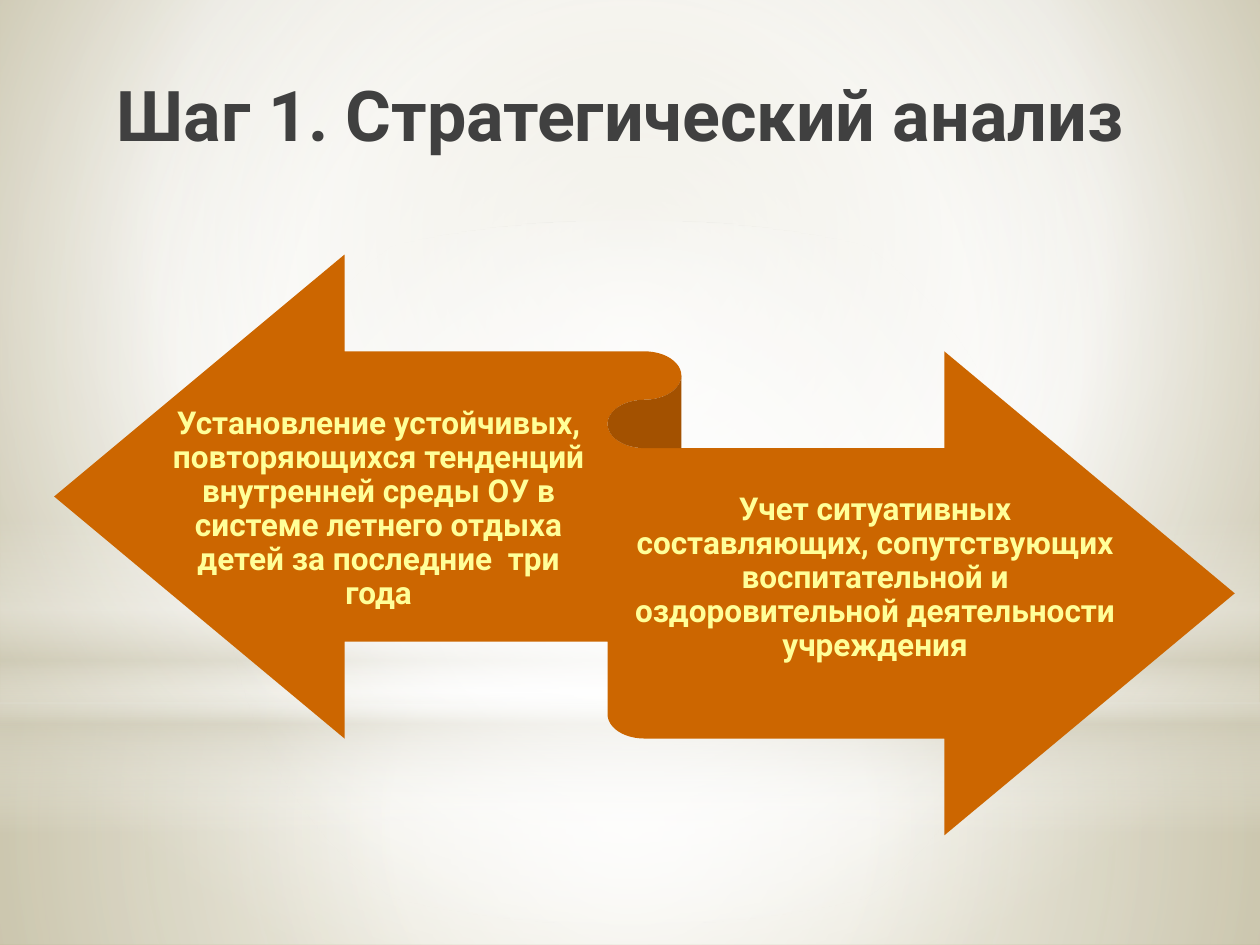
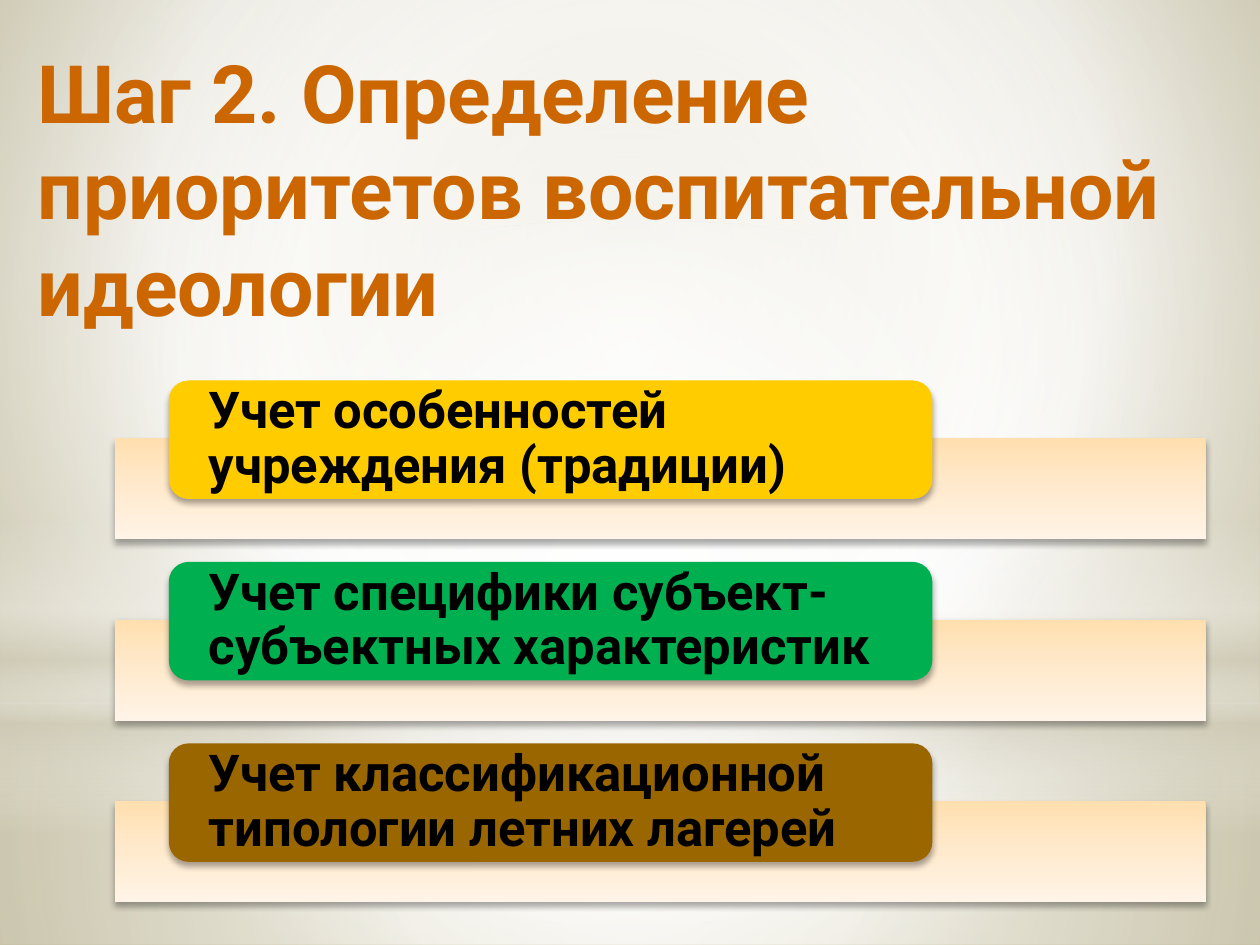
from dataclasses import dataclass

from lxml import etree
from pptx import Presentation
from pptx import util as u
from pptx.dml import color
from pptx.enum import shapes, text
from pptx.oxml import ns

# Content
STEP_1 = {
    "title": "Шаг 1. Стратегический анализ",
    "title_box": (0.83, 0.52, 8.5, 0.94),
    "ribbon_box": (0.43, 2.02, 9.37, 4.61),
    "directions": [
        ("Установление устойчивых, повторяющихся тенденций внутренней среды ОУ "
         "в системе летнего отдыха детей за последние  три года",
         (1.3, 3.12, 3.41, 1.84)),
        ("Учет ситуативных составляющих, сопутствующих воспитательной и "
         "оздоровительной деятельности учреждения",
         (5, 3.46, 3.89, 2.26)),
    ],
}
STEP_2 = {
    "title": "Шаг 2. Определение приоритетов воспитательной идеологии",
    "title_box": (0.2, 0.29, 9.61, 2.35),
    "priorities": [
        ("Учет особенностей учреждения (традиции)", "FFCC00"),
        ("Учет специфики субъект-субъектных характеристик", "00B050"),
        ("Учет классификационной типологии летних лагерей", "996600"),
    ],
}


@dataclass(frozen=True)
class Theme:
    font: str = "Roboto"
    dark: str = "404040"
    accent: str = "CC6600"
    ribbon_text: str = "FFFF99"
    label_text: str = "000000"
    shadow: str = "000000"
    title_1_size: int = 40
    title_2_size: int = 46
    ribbon_size: int = 18
    label_size: int = 29
    line_spacing: float = 0.9
    # Gradient stops: position, colour, opacity (percent)
    backdrop: tuple = ((0, "CEC8AC", 100), (60, "FFFFFF", 100), (100, "B9B085", 100))
    bar: tuple = ((0, "FFDFAF", 100), (50, "FFEACE", 100), (100, "FFF4E7", 100))
    floor: tuple = ((0, "FFFFFF", 91), (37, "FFFFFF", 76), (100, "D0CCB9", 79))
    wall: tuple = ((0, "FFFFFF", 89), (48, "FFFFFF", 62), (100, "D0CCB9", 79))
    horizon: tuple = ((0, "FFFFFF", 0), (29, "FFFFFF", 30), (45, "D0CCB9", 40),
                      (55, "FFFFFF", 26), (65, "D0CCB9", 60), (100, "FFFFFF", 0))
    glow: tuple = ((0, "FFFFFF", 100), (56, "FFFFFF", 0))


THEME = Theme()
PRESET = shapes.MSO_SHAPE
CENTRE = (50, 50, 50, 50)

# Light layers behind every slide: preset, box, stops, focus (None = vertical)
LAYERS = [
    (PRESET.RECTANGLE, (0, 5.58, 10, 1.92), THEME.floor, CENTRE),
    (PRESET.RECTANGLE, (0, 0, 10, 5.58), THEME.wall, CENTRE),
    (PRESET.RECTANGLE, (0, 4.12, 10, 2.5), THEME.horizon, None),
    (PRESET.OVAL, (0, 1.75, 10, 5.58), THEME.glow, CENTRE),
]


# Drawing helpers
def inches(box):
    return [u.Inches(length) for length in box]


def add_node(parent, tag, **attributes):
    values = {name: str(value) for name, value in attributes.items()}
    return etree.SubElement(parent, ns.qn(tag), values)


def add_colour(parent, value, opacity):
    node = add_node(parent, "a:srgbClr", val=value)
    if opacity < 100:
        add_node(node, "a:alpha", val=opacity * 1000)


def set_gradient(owner, fill, stops, focus=None):
    """Swap the solid fill inside owner for a vertical or circular gradient."""
    fill.solid()
    solid = next(owner.iter(ns.qn("a:solidFill")))
    gradient = etree.Element(ns.qn("a:gradFill"))
    stop_list = add_node(gradient, "a:gsLst")
    for position, value, opacity in stops:
        add_colour(add_node(stop_list, "a:gs", pos=position * 1000), value, opacity)
    if focus:
        circle = add_node(gradient, "a:path", path="circle")
        sides = {side: part * 1000 for side, part in zip("ltrb", focus)}
        add_node(circle, "a:fillToRect", **sides)
    else:
        add_node(gradient, "a:lin", ang=90 * 60000, scaled=0)
    solid.getparent().replace(solid, gradient)


def add_block(slide, preset, box, fill=None, stops=None, focus=None):
    shape = slide.shapes.add_shape(preset, *inches(box))
    shape.shadow.inherit = False
    shape.line.fill.background()
    if stops:
        set_gradient(shape._element.spPr, shape.fill, stops, focus)
    else:
        shape.fill.solid()
        shape.fill.fore_color.rgb = color.RGBColor.from_string(fill)
    return shape


def add_shadow(shape):
    effects = shape._element.spPr.find(ns.qn("a:effectLst"))
    shadow = add_node(effects, "a:outerShdw", blurRad=u.Pt(3.5), dist=u.Pt(2.2),
                      dir=90 * 60000, algn="ctr", rotWithShape=0)
    add_colour(shadow, THEME.shadow, 32)


def write(shape, words, size, colour, align=text.PP_ALIGN.LEFT,
          anchor=text.MSO_ANCHOR.MIDDLE, margins=(0.1, 0.05), spacing=1.0):
    frame = shape.text_frame
    frame.word_wrap = True
    frame.vertical_anchor = anchor
    frame.margin_left = frame.margin_right = u.Inches(margins[0])
    frame.margin_top = frame.margin_bottom = u.Inches(margins[1])
    frame.text = words
    paragraph = frame.paragraphs[0]
    paragraph.alignment = align
    paragraph.line_spacing = spacing
    for run in paragraph.runs:
        run.font.name = THEME.font
        run.font.size = u.Pt(size)
        run.font.bold = True
        run.font.color.rgb = color.RGBColor.from_string(colour)


def add_step_slide(presentation, step, size, colour):
    """Blank slide with the shared backdrop, light layers and title."""
    slide = presentation.slides.add_slide(presentation.slide_layouts[6])
    set_gradient(slide._element.cSld, slide.background.fill, THEME.backdrop,
                 (20, 10, 20, 60))
    for preset, box, stops, focus in LAYERS:
        add_block(slide, preset, box, stops=stops, focus=focus)
    title = slide.shapes.add_textbox(*inches(step["title_box"]))
    write(title, step["title"], size, colour, anchor=text.MSO_ANCHOR.TOP)
    return slide


# Slides
def build_analysis(presentation):
    slide = add_step_slide(presentation, STEP_1, THEME.title_1_size, THEME.dark)
    add_block(slide, PRESET.LEFT_RIGHT_RIBBON, STEP_1["ribbon_box"], THEME.accent)
    for words, box in STEP_1["directions"]:
        direction = slide.shapes.add_textbox(*inches(box))
        write(direction, words, THEME.ribbon_size, THEME.ribbon_text,
              align=text.PP_ALIGN.CENTER, margins=(0, 0.07),
              spacing=THEME.line_spacing)


def build_priorities(presentation):
    slide = add_step_slide(presentation, STEP_2, THEME.title_2_size, THEME.accent)
    first_top, row_pitch, bar_drop = 3.02, 1.44, 0.46
    for row, (words, fill) in enumerate(STEP_2["priorities"]):
        top = first_top + row * row_pitch
        bar = add_block(slide, PRESET.RECTANGLE, (0.91, top + bar_drop, 8.66, 0.8),
                        stops=THEME.bar)
        label = add_block(slide, PRESET.ROUNDED_RECTANGLE, (1.34, top, 6.06, 0.94), fill)
        for shape in (bar, label):
            add_shadow(shape)
        write(label, words, THEME.label_size, THEME.label_text,
              margins=(0.27, 0), spacing=THEME.line_spacing)


def main():
    presentation = Presentation()
    presentation.slide_width, presentation.slide_height = inches((10, 7.5))
    build_analysis(presentation)
    build_priorities(presentation)
    presentation.save("out.pptx")


if __name__ == "__main__":
    main()
